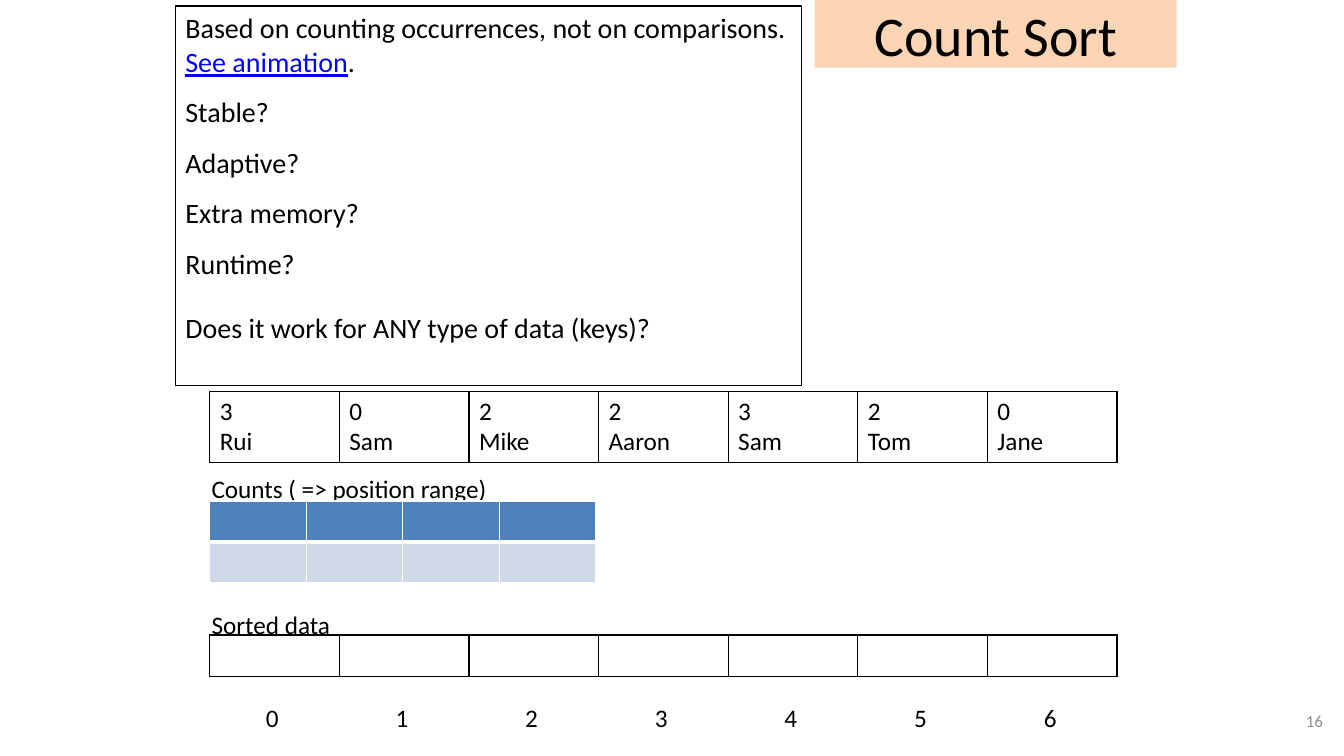
from lxml import etree
from pptx import Presentation
from pptx.dml.color import RGBColor
from pptx.enum.shapes import MSO_SHAPE
from pptx.enum.text import MSO_ANCHOR, MSO_AUTO_SIZE, PP_ALIGN
from pptx.oxml.ns import qn
from pptx.util import Inches, Pt

RECT = MSO_SHAPE.RECTANGLE
TOP, MID = MSO_ANCHOR.TOP, MSO_ANCHOR.MIDDLE
LEFT, CENTER, RIGHT = PP_ALIGN.LEFT, PP_ALIGN.CENTER, PP_ALIGN.RIGHT
FIXED = MSO_AUTO_SIZE.NONE
FONT = "Calibri"
COLORS = {
    "ink": "000000",
    "white": "FFFFFF",
    "peach": "FCD5B5",
    "blue": "4F81BD",
    "pale": "D0D8E8",
    "link": "0000FF",
    "gray": "8C8C8C",
}
ITEMS = [(3, "Rui"), (0, "Sam"), (2, "Mike"), (2, "Aaron"),
         (3, "Sam"), (2, "Tom"), (0, "Jane")]
NOTES = [
    ("Based on counting occurrences, not on comparisons.", 0),
    ("See animation", 0),
    ("Stable?", 12),
    ("Adaptive?", 12),
    ("Extra memory?", 12),
    ("Runtime?", 12),
    ("Does it work for ANY type of data (keys)?", 22),
]
STEP = 9 / len(ITEMS)


def color(name):
    """Return the named colour."""
    return RGBColor.from_string(COLORS[name])


def write(para, text, size=18, ink="ink", align=LEFT, line=False, before=0):
    """Add a formatted run to a paragraph."""
    para.alignment = align
    para.space_before = Pt(before)
    run = para.add_run()
    run.text = text
    font = run.font
    font.name, font.size, font.bold = FONT, Pt(size), False
    font.underline = line
    font.color.rgb = color(ink)


def label(slide, box, text, anchor=TOP, **style):
    """Place one line of text in a box."""
    frame = slide.shapes.add_textbox(*map(Inches, box)).text_frame
    frame.word_wrap = False
    frame.vertical_anchor = anchor
    write(frame.paragraphs[0], text, **style)


def border(cell, ink, widths):
    """Draw the left, right, top and bottom edges of a cell."""
    props = cell._tc.get_or_add_tcPr()
    for i, (side, width) in enumerate(zip("LRTB", widths)):
        edge = etree.Element(qn(f"a:ln{side}"), w=str(Pt(width)))
        fill = etree.SubElement(edge, qn("a:solidFill"))
        etree.SubElement(fill, qn("a:srgbClr"), val=COLORS[ink])
        props.insert(i, edge)


def grid(slide, box, rows, cols, fills, ink):
    """Add a table of equal cells with one fill per row."""
    table = slide.shapes.add_table(rows, cols, *map(Inches, box)).table
    table.horz_banding = False
    table.first_row = False
    for col in table.columns:
        col.width = Inches(box[2] / cols)
    for r, fill in enumerate(fills):
        table.rows[r].height = Inches(box[3] / rows)
        for c in range(cols):
            cell = table.cell(r, c)
            if fill:
                cell.fill.solid()
                cell.fill.fore_color.rgb = color(fill)
            else:
                cell.fill.background()
            top = 3 if r else 1
            low = 3 if r < rows - 1 else 1
            border(cell, ink, (1, 1, top, low))
    return table


def head(slide, box):
    """Format the title."""
    title = slide.shapes.title
    title.left, title.top, title.width, title.height = map(Inches, box)
    title.fill.solid()
    title.fill.fore_color.rgb = color("peach")
    frame = title.text_frame
    frame.auto_size = FIXED
    frame.vertical_anchor = MID
    write(frame.paragraphs[0], "Count Sort", size=40, align=CENTER)


def notes(slide, box):
    """Draw the framed list of questions."""
    shape = slide.shapes.add_shape(RECT, *map(Inches, box))
    shape.shadow.inherit = False
    shape.fill.background()
    shape.line.color.rgb = color("ink")
    shape.line.width = Pt(0.75)
    frame = shape.text_frame
    frame.word_wrap = False
    frame.vertical_anchor = TOP
    for i, (text, before) in enumerate(NOTES):
        para = frame.add_paragraph() if i else frame.paragraphs[0]
        link = text == "See animation"
        write(para, text, size=20, ink="link" if link else "ink",
              line=link, before=before)
        if link:
            write(para, ".", size=20)


def data(slide, box):
    """Draw the row of records to sort."""
    table = grid(slide, box, 1, len(ITEMS), [None], "ink")
    for cell, (key, name) in zip(table.rows[0].cells, ITEMS):
        frame = cell.text_frame
        write(frame.paragraphs[0], str(key))
        write(frame.add_paragraph(), name)


def counts(slide, box):
    """Draw the count table under its caption."""
    x, y, w, h = box
    label(slide, (x, y, 2.97, 0.4), "Counts ( => position range)")
    grid(slide, (x + 0.08, y + 0.32, w, h), 2, 4, ["blue", "pale"], "white")


def output(slide, box):
    """Draw the sorted row with its caption and indices."""
    x, y, w, h = box
    label(slide, (x, y, 1.39, 0.4), "Sorted data")
    grid(slide, (x + 0.08, y + 0.3, w, h), 1, len(ITEMS), [None], "ink")
    for i in range(len(ITEMS)):
        label(slide, (x + 0.54 + i * STEP, y + 0.92, 0.33, 0.4), str(i))


def main():
    """Build and save the slide."""
    deck = Presentation()
    deck.slide_width, deck.slide_height = Inches(13.33), Inches(7.5)
    slide = deck.slides.add_slide(deck.slide_layouts[5])
    head(slide, (8.08, 0, 3.59, 0.67))
    data(slide, (2.08, 3.88, 9, 0.7))
    counts(slide, (2, 4.65, 3.83, 0.81))
    output(slide, (2, 6, 9, 0.41))
    notes(slide, (1.74, 0.06, 6.21, 3.77))
    label(slide, (10.11, 6.95, 3.11, 0.4), "16", anchor=MID,
          size=12, ink="gray", align=RIGHT)
    deck.save("out.pptx")


if __name__ == "__main__":
    main()
